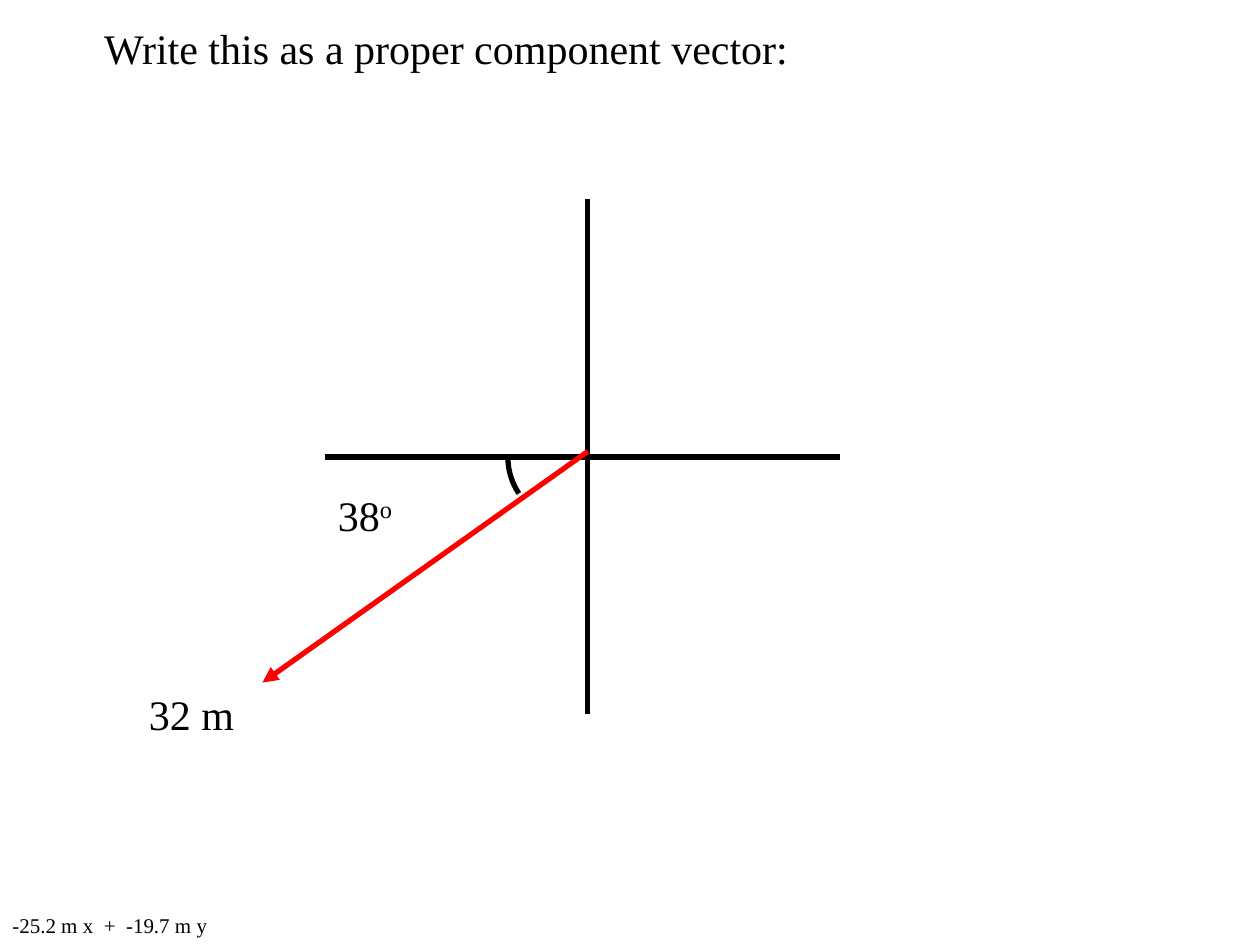
"""Build a slide asking for the components of a 32 m vector."""
import dataclasses
import math

import lxml.etree
import pptx
import pptx.dml.color
import pptx.enum.shapes
import pptx.enum.text
import pptx.oxml.ns
import pptx.shapes.connector
import pptx.slide
import pptx.text.text
import pptx.util

Cm = pptx.util.Cm


@dataclasses.dataclass(frozen=True)
class Theme:
    ink: pptx.dml.color.RGBColor = pptx.dml.color.RGBColor(0, 0, 0)
    vector: pptx.dml.color.RGBColor = pptx.dml.color.RGBColor(255, 0, 0)
    font: str = "Times New Roman"
    body_size: pptx.util.Pt = pptx.util.Pt(24)
    answer_size: pptx.util.Pt = pptx.util.Pt(12)
    stroke: pptx.util.Pt = pptx.util.Pt(3)


@dataclasses.dataclass(frozen=True)
class Line:
    start: tuple[float, float]
    end: tuple[float, float]
    color: pptx.dml.color.RGBColor
    arrow: bool = False


@dataclasses.dataclass(frozen=True)
class Label:
    text: str
    left: float
    top: float
    width: float
    height: float
    size: pptx.util.Pt
    superscript: str = ""


THEME = Theme()
ORIGIN_X, ORIGIN_Y, AXIS_REACH = 11.85, 9.21, 5.19

LINES = [
    Line((ORIGIN_X - 5.29, ORIGIN_Y), (ORIGIN_X + 5.08, ORIGIN_Y), THEME.ink),
    Line((ORIGIN_X, ORIGIN_Y - AXIS_REACH), (ORIGIN_X, ORIGIN_Y + AXIS_REACH), THEME.ink),
    Line((ORIGIN_X, 9.1), (5.29, 13.76), THEME.vector, arrow=True),
]
LABELS = [
    Label("38", 6.56, 9.74, 1.65, 1.27, THEME.body_size, superscript="o"),
    Label("Write this as a proper component vector:", 1.85, 0.32, 14.43, 1.27, THEME.body_size),
    Label("32 m", 2.75, 13.76, 2.23, 1.27, THEME.body_size),
    Label("-25.2 m x  +  -19.7 m y", 0, 18.28, 4.5, 0.77, THEME.answer_size),
]


def draw_line(slide: pptx.slide.Slide, line: Line) -> pptx.shapes.connector.Connector:
    connector = slide.shapes.add_connector(
        pptx.enum.shapes.MSO_CONNECTOR.STRAIGHT, *map(Cm, line.start + line.end)
    )
    connector.line.color.rgb = line.color
    connector.line.width = THEME.stroke
    if line.arrow:
        outline = connector.line._get_or_add_ln()
        lxml.etree.SubElement(outline, pptx.oxml.ns.qn("a:tailEnd"), type="triangle")
    lxml.etree.SubElement(connector._element.spPr, pptx.oxml.ns.qn("a:effectLst"))
    return connector


def draw_angle_arc(
    slide: pptx.slide.Slide, center: tuple[float, float], radius: float, sweep: int
) -> None:
    points = [
        (
            Cm(center[0] - radius * math.cos(math.radians(angle))),
            Cm(center[1] + radius * math.sin(math.radians(angle))),
        )
        for angle in range(0, sweep + 1, 2)
    ]
    builder = slide.shapes.build_freeform(*points[0])
    builder.add_line_segments(points[1:], close=False)
    shape = builder.convert_to_shape()
    shape.shadow.inherit = False
    shape.fill.background()
    shape.line.color.rgb = THEME.ink
    shape.line.width = THEME.stroke


def add_run(
    paragraph: pptx.text.text._Paragraph, text: str, *, size: pptx.util.Pt, baseline: int = 0
) -> None:
    run = paragraph.add_run()
    run.text = text
    run.font.name = THEME.font
    run.font.size = size
    run.font.color.rgb = THEME.ink
    if baseline:
        run._r.get_or_add_rPr().set("baseline", str(baseline * 1000))


def draw_label(slide: pptx.slide.Slide, label: Label) -> None:
    box = slide.shapes.add_textbox(
        Cm(label.left), Cm(label.top), Cm(label.width), Cm(label.height)
    )
    frame = box.text_frame
    frame.word_wrap = False
    frame.auto_size = pptx.enum.text.MSO_AUTO_SIZE.SHAPE_TO_FIT_TEXT
    paragraph = frame.paragraphs[0]
    add_run(paragraph, label.text, size=label.size)
    if label.superscript:
        add_run(paragraph, label.superscript, size=label.size, baseline=30)


def main() -> None:
    presentation = pptx.Presentation()
    presentation.slide_width, presentation.slide_height = Cm(25.4), Cm(19.05)
    slide = presentation.slides.add_slide(presentation.slide_layouts[6])
    for line in LINES:
        draw_line(slide, line)
    draw_angle_arc(slide, center=(11.54, 9.22), radius=1.3, sweep=34)
    for label in LABELS:
        draw_label(slide, label)
    presentation.save("out.pptx")


if __name__ == "__main__":
    main()
